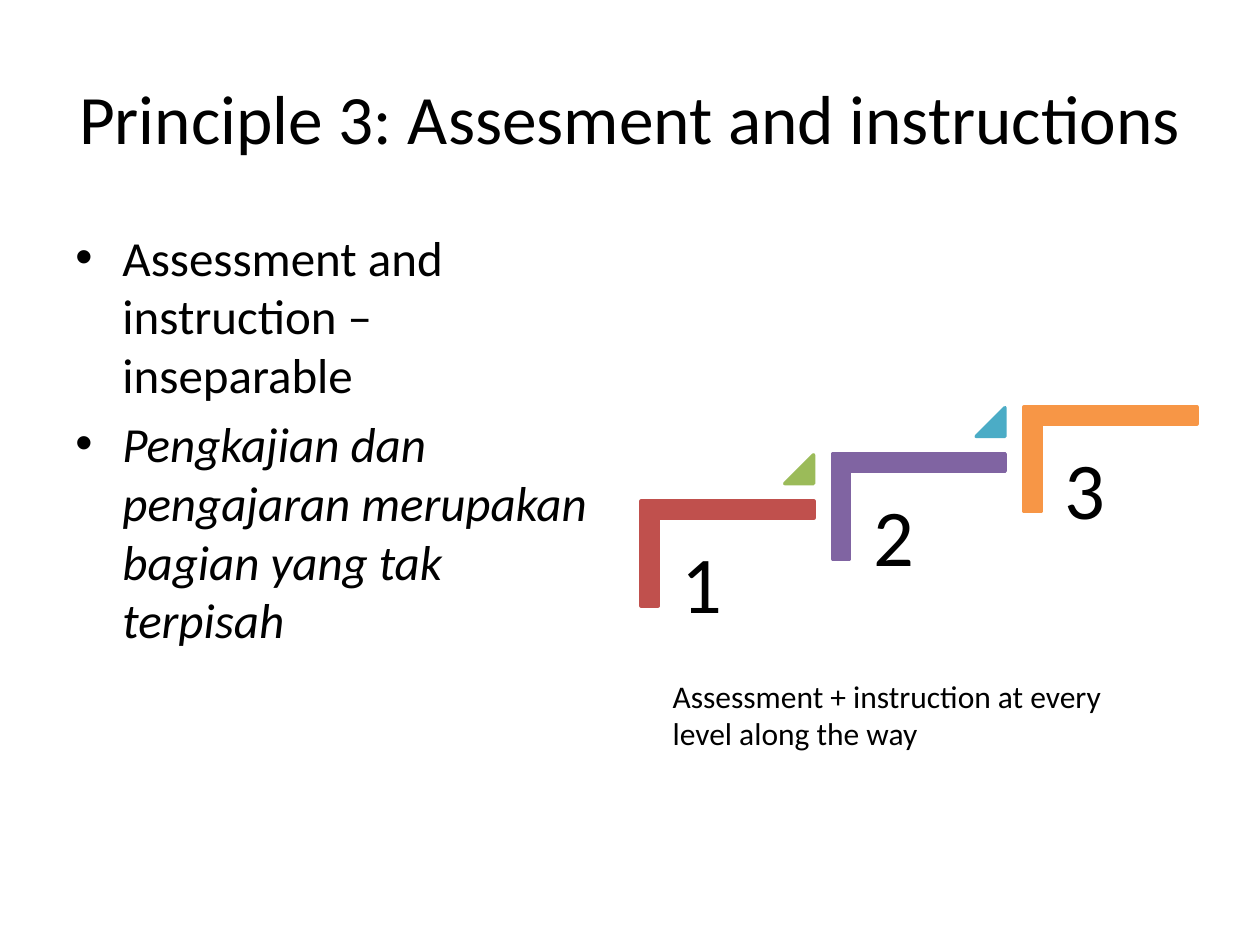
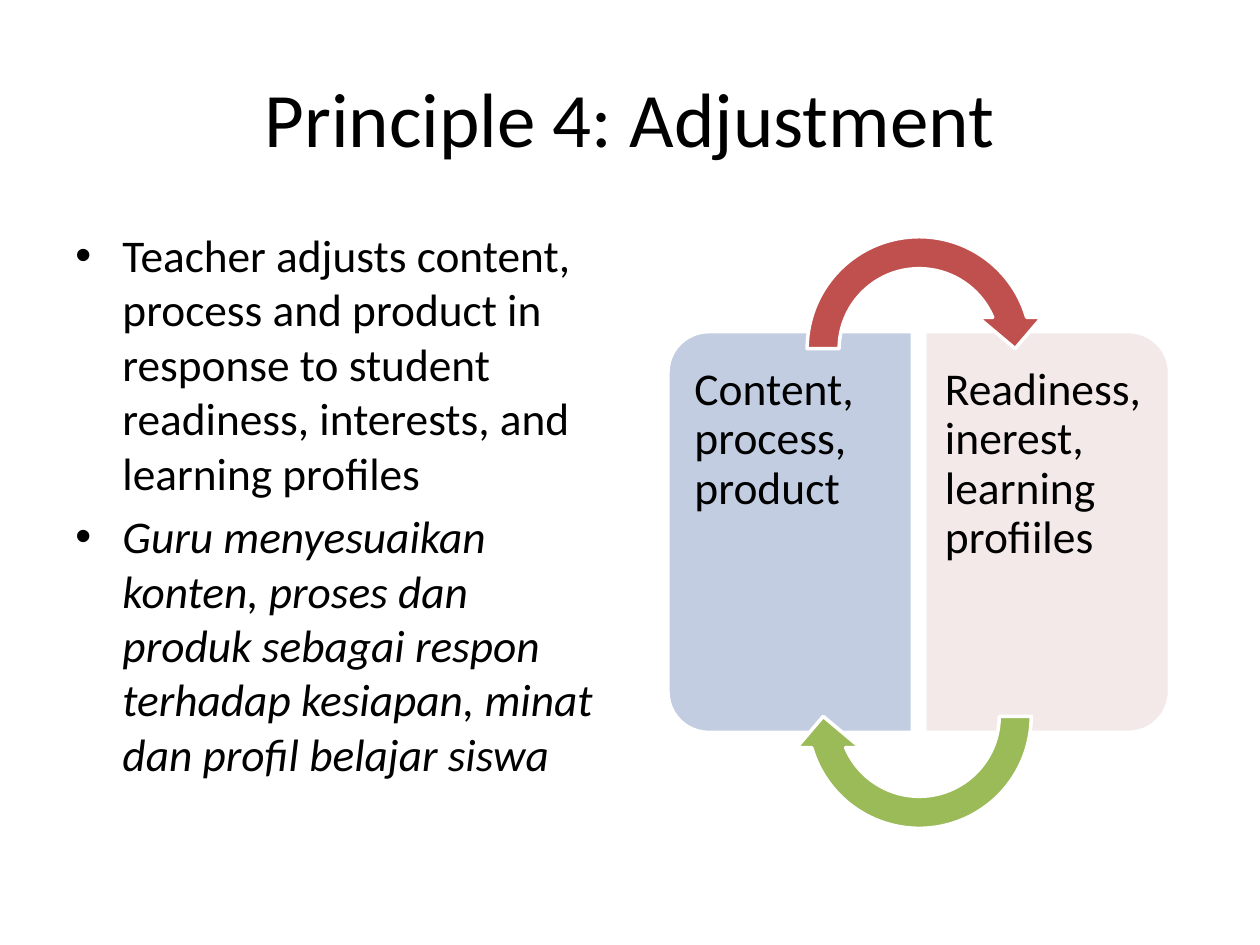
from dataclasses import dataclass

from pptx import Presentation
from pptx.dml.color import RGBColor
from pptx.enum.shapes import MSO_SHAPE as Shape
from pptx.enum.text import MSO_ANCHOR as Anchor, PP_ALIGN as Align
from pptx.oxml.xmlchemy import OxmlElement
from pptx.util import Cm, Pt

# Content
STEPS_PAGE = {
    "title": ("Principle 3: Assesment and instructions", 39.6),
    "body": ("Assessment and instruction – inseparable",
             "Pengkajian dan pengajaran merupakan bagian yang tak terpisah"),
    "body_size": 28,
}
CAPTION = "Assessment + instruction at every level along the way"
ADJUST_PAGE = {
    "title": ("Principle 4: Adjustment", 44),
    "body": ("Teacher adjusts content, process and product in response to student "
             "readiness, interests, and learning profiles",
             "Guru menyesuaikan konten, proses dan produk sebagai respon terhadap "
             "kesiapan, minat dan profil belajar siswa"),
    "body_size": 25.9,
}
# Step number, stair colour, colour of the triangle leading to the next step
STEPS = [("1", "C0504D", "9BBB59"), ("2", "8064A2", "4BACC6"), ("3", "F79646", None)]
# Panel text, fill, rotation, left and right inset
PANELS = [("Content, process, product", "C2CDE1", 270, 0.28, 0.41),
          ("Readiness, inerest, learning profiiles", "F4E9E9", 90, 0.41, 0.28)]
# Arrow colour, top, rotation
ARROWS = [("C0504D", 4.45, 0), ("9BBB59", 11.86, 180)]


@dataclass(frozen=True)
class Theme:
    font: str = "Calibri"
    ink: str = "000000"
    paper: str = "FFFFFF"
    number_size: float = 46
    panel_size: float = 26
    caption_size: float = 18
    line_width: float = 2
    indent: float = 0.95


THEME = Theme()
PLAIN_INSETS = (0.25, 0.13, 0.25, 0.13)


# Shared helpers
def add_text(page, place, lines, size, insets=PLAIN_INSETS, spacing=None):
    box = page.shapes.add_textbox(*map(Cm, place))
    frame = box.text_frame
    frame.word_wrap = True
    (frame.margin_left, frame.margin_top,
     frame.margin_right, frame.margin_bottom) = map(Cm, insets)
    frame.text = "\n".join(lines)
    for para in frame.paragraphs:
        para.line_spacing = spacing
        for span in para.runs:
            span.font.name = THEME.font
            span.font.size = Pt(size)
            span.font.color.rgb = RGBColor.from_string(THEME.ink)
    return frame


def add_figure(page, kind, place, fill, line, rotation=0, adjustments=()):
    figure = page.shapes.add_shape(kind, *map(Cm, place))
    figure.shadow.inherit = False
    figure.rotation = rotation
    figure.fill.solid()
    figure.fill.fore_color.rgb = RGBColor.from_string(fill)
    figure.line.color.rgb = RGBColor.from_string(line)
    figure.line.width = Pt(THEME.line_width)
    for index, value in enumerate(adjustments):
        figure.adjustments[index] = value


def add_bullet(para):
    props = para._p.get_or_add_pPr()
    props.set("marL", str(Cm(THEME.indent)))
    props.set("indent", str(-Cm(THEME.indent)))
    for tag, key, value in (("a:buFont", "typeface", "Arial"), ("a:buChar", "char", "•")):
        element = OxmlElement(tag)
        element.set(key, value)
        props.append(element)


def add_page(deck, content):
    page = deck.slides.add_slide(deck.slide_layouts[6])
    page.background.fill.solid()
    page.background.fill.fore_color.rgb = RGBColor.from_string(THEME.paper)

    title, title_size = content["title"]
    heading = add_text(page, (1.27, 0.76, 22.86, 3.18), [title], title_size)
    heading.vertical_anchor = Anchor.MIDDLE
    heading.paragraphs[0].alignment = Align.CENTER

    # English bullet first, then its translation in italics
    size = content["body_size"]
    body = add_text(page, (1.27, 4.45, 11.23, 12.57), content["body"], size)
    for para in body.paragraphs:
        para.space_before = Pt(0.2 * size)
        add_bullet(para)
    body.paragraphs[1].runs[0].font.italic = True
    return page


# Rising staircase
def draw_steps(page):
    for index, (number, stair, triangle) in enumerate(STEPS):
        right, up = 3.86 * index, 0.95 * index
        add_figure(page, Shape.CORNER, (13.61 + right, 9.42 - up, 2.11, 3.48),
                   stair, stair, 90, (0.161, 0.161))
        add_text(page, (13.26 + right, 10.49 - up, 3.15, 2.77), [number],
                 THEME.number_size, (0.48,) * 4, 0.9)
        if triangle:
            add_figure(page, Shape.ISOSCELES_TRIANGLE,
                       (15.82 + right, 9.17 - up, 0.58, 0.58),
                       triangle, triangle, adjustments=(1,))
    add_text(page, (13.31, 13.51, 10.39, 1.8), [CAPTION], THEME.caption_size)


# Two panels joined by a cycle of arrows
def draw_cycle(page):
    for index, (text, fill, rotation, left, right) in enumerate(PANELS):
        add_figure(page, Shape.ROUND_2_SAME_RECTANGLE,
                   (11.89 + 5.18 * index, 8.26, 8.08, 4.93),
                   fill, THEME.paper, rotation, (0.167, 0))
        add_text(page, (13.72 + 4.92 * index, 6.93, 4.7, 7.59), [text],
                 THEME.panel_size, (left, 0.46, right, 0.46), 0.9)
    for fill, top, rotation in ARROWS:
        add_figure(page, Shape.CIRCULAR_ARROW, (15.95, top, 5.16, 5.16),
                   fill, THEME.paper, rotation, (0.125, 11.423, 204.577, 108, 0.125))


def main():
    deck = Presentation()
    deck.slide_width, deck.slide_height = Cm(25.4), Cm(19.05)
    draw_steps(add_page(deck, STEPS_PAGE))
    draw_cycle(add_page(deck, ADJUST_PAGE))
    deck.save("out.pptx")


if __name__ == "__main__":
    main()
